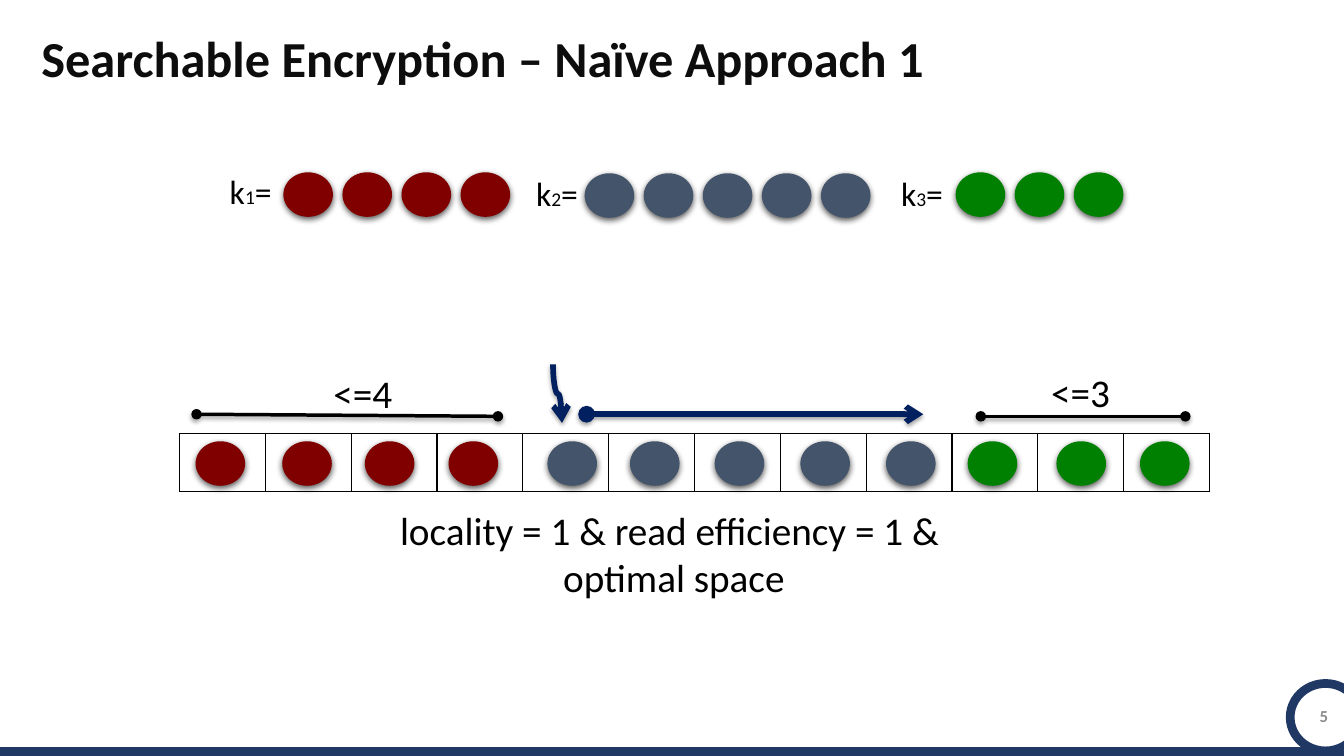
from dataclasses import dataclass

import pptx
import pptx.chart.data
import pptx.dml.color
import pptx.enum.shapes
import pptx.enum.text
import pptx.oxml
import pptx.oxml.ns
import pptx.util

Pt = pptx.util.Pt
Align = pptx.enum.text.PP_ALIGN
Anchor = pptx.enum.text.MSO_ANCHOR
Geometry = pptx.enum.shapes.MSO_SHAPE
Link = pptx.enum.shapes.MSO_CONNECTOR
NS = pptx.oxml.ns.nsdecls("a")

BLACK, NAVY, FRAME = "000000", "002060", "203864"
DOT_WIDTH, DOT_HEIGHT, DOT_PITCH = 35.4, 31.8, 42.2
STORED_TOP = 315.2
CELLS, CELL_WIDTH, CELL_HEIGHT = 12, 61.32, 41.2


@dataclass(frozen=True)
class Keyword:
    """A keyword's list of entries, above and in the storage array."""
    number: str
    color: str
    label_at: tuple[float, float]
    list_at: tuple[float, float]
    stored_x: tuple[float, ...]


@dataclass(frozen=True)
class Span:
    """A line over the storage array."""
    start: tuple[float, float]
    end: tuple[float, float]
    color: str = BLACK
    width: float = 2.5
    head: str | None = "oval"
    tail: str = "oval"
    kind: Link = Link.STRAIGHT
    rotation: int = 0


KEYWORDS = (
    Keyword("1", "800000", (157, 118.8), (202.4, 123.1), (139.7, 201.6, 260.6, 320.4)),
    Keyword("2", "44546A", (375.8, 120.2), (417.6, 123.8), (391, 450, 510.5, 571.7, 632.9)),
    Keyword("3", "008000", (636.5, 120.2), (682.6, 123.1), (691.2, 754.6, 814.3)),
)
SPANS = (
    Span((419.1, 277.9), (377.3, 284.4), NAVY, 4, None, "arrow", Link.CURVE, 270),
    Span((419, 295.9), (659.5, 295.9), NAVY, 4, "oval", "arrow"),
    Span((700.6, 297.4), (846.7, 297.4)),
    Span((140.4, 295.9), (355.7, 297.4)),
)
BOUNDS = (("<=4", 231.1, 259.9), ("<=3", 743.8, 259.2))


def rgb(color: str) -> pptx.dml.color.RGBColor:
    return pptx.dml.color.RGBColor.from_string(color)


def write(frame, *runs: str, size: float, color: str = BLACK, bold: bool = False,
          align: Align = Align.LEFT, anchor: Anchor = Anchor.TOP, wrap: bool = True,
          raised: str = "") -> None:
    """Fill a text frame; a "\\n" run breaks the line, the raised run is set small."""
    frame.word_wrap = wrap
    frame.vertical_anchor = anchor
    paragraph = frame.paragraphs[0]
    paragraph.alignment = align
    for words in runs:
        if words == "\n":
            paragraph.add_line_break()
            continue
        run = paragraph.add_run()
        run.text = words
        run.font.name = "Calibri"
        run.font.size = Pt(size)
        run.font.bold = bold
        run.font.color.rgb = rgb(color)
        if words == raised:
            run.font._element.set("baseline", "1000")


def text_frame(slide, left: float, top: float, width: float, height: float):
    return slide.shapes.add_textbox(Pt(left), Pt(top), Pt(width), Pt(height)).text_frame


def set_effects(shape, alpha: int = 0, blur: float = 0, distance: float = 0) -> None:
    """Give a shape a downward shadow, or none when alpha is 0."""
    shadow = ""
    if alpha:
        shadow = (f'<a:outerShdw blurRad="{Pt(blur)}" dist="{Pt(distance)}" dir="5400000" '
                  f'rotWithShape="0"><a:srgbClr val="{BLACK}"><a:alpha val="{alpha * 1000}"/>'
                  '</a:srgbClr></a:outerShdw>')
    shape._element.spPr.append(
        pptx.oxml.parse_xml(f"<a:effectLst {NS}>{shadow}</a:effectLst>"))


def draw_dot(slide, left: float, top: float, color: str) -> None:
    dot = slide.shapes.add_shape(Geometry.FLOWCHART_CONNECTOR, Pt(left), Pt(top),
                                 Pt(DOT_WIDTH), Pt(DOT_HEIGHT))
    dot.fill.solid()
    dot.fill.fore_color.rgb = rgb(color)
    dot.line.fill.background()
    set_effects(dot, alpha=63, blur=4.5, distance=1.5)


def draw_line(slide, start: tuple[float, float], end: tuple[float, float],
              color: str, width: float, kind: Link = Link.STRAIGHT):
    line = slide.shapes.add_connector(kind, *map(Pt, start + end))
    line.line.color.rgb = rgb(color)
    line.line.width = Pt(width)
    return line


def draw_span(slide, span: Span) -> None:
    line = draw_line(slide, span.start, span.end, span.color, span.width, span.kind)
    if span.rotation:
        line._element.spPr.xfrm.set("rot", str(span.rotation * 60000))
    for tag, ending in (("headEnd", span.head), ("tailEnd", span.tail)):
        if ending:
            line.line._get_or_add_ln().append(
                pptx.oxml.parse_xml(f'<a:{tag} {NS} type="{ending}"/>'))
    set_effects(line, alpha=35, blur=3.1, distance=1.8)


def draw_array(slide) -> None:
    array = slide.shapes.add_table(1, CELLS, Pt(128.2), Pt(309.6),
                                   Pt(CELLS * CELL_WIDTH), Pt(CELL_HEIGHT)).table
    array.first_row = array.horz_banding = False
    for column in array.columns:
        column.width = Pt(CELL_WIDTH)
    for cell in array.iter_cells():
        properties = cell._tc.get_or_add_tcPr()
        for side in ("lnL", "lnR", "lnT", "lnB"):
            properties.append(pptx.oxml.parse_xml(
                f'<a:{side} {NS} w="{Pt(1)}"><a:solidFill><a:srgbClr val="{BLACK}"/>'
                f'</a:solidFill></a:{side}>'))
        cell.fill.background()


def draw_footer(slide) -> None:
    bar = draw_line(slide, (0, 537.8), (960, 537.8), FRAME, 8.25)
    set_effects(bar)
    ring = slide.shapes.add_shape(Geometry.OVAL, Pt(921.6), Pt(488.2), Pt(50.4), Pt(48.2))
    ring.fill.background()
    ring.line.color.rgb = rgb(FRAME)
    ring.line.width = Pt(6.25)
    ring.shadow.inherit = False
    write(text_frame(slide, 925.2, 496.8, 41, 28.8), "5", size=12, color="8C8C8C",
          bold=True, align=Align.CENTER, anchor=Anchor.MIDDLE)


def draw_title(slide) -> None:
    title = slide.shapes.title
    title.left, title.top, title.width, title.height = map(Pt, (29.5, 30.2, 802, 30.2))
    frame = title.text_frame
    frame.margin_left = frame.margin_right = frame.margin_top = frame.margin_bottom = 0
    write(frame, "Searchable Encryption – Naïve Approach 1", size=36, color="0D0D0D",
          bold=True, anchor=Anchor.MIDDLE)
    frame.paragraphs[0].line_spacing = 0.8


def main() -> None:
    deck = pptx.Presentation()
    deck.slide_width, deck.slide_height = Pt(960), Pt(540)
    slide = deck.slides.add_slide(deck.slide_layouts[5])
    draw_title(slide)
    draw_footer(slide)
    draw_array(slide)
    for span in SPANS:
        draw_span(slide, span)
    for bound, left, top in BOUNDS:
        write(text_frame(slide, left, top, 77, 41), bound, size=28)
    for keyword in KEYWORDS:
        write(text_frame(slide, *keyword.label_at, 46, 36), "k", keyword.number, "=",
              size=24, wrap=False, raised=keyword.number)
        list_left, list_top = keyword.list_at
        for position, stored_left in enumerate(keyword.stored_x):
            draw_dot(slide, list_left + position * DOT_PITCH, list_top, keyword.color)
            draw_dot(slide, stored_left, STORED_TOP, keyword.color)
    write(text_frame(slide, 275.8, 357.8, 411, 75),
          "locality = 1 & read efficiency = 1 & ", "\n", "optimal space",
          size=28, align=Align.CENTER, wrap=False)
    deck.save("out.pptx")


if __name__ == "__main__":
    main()
